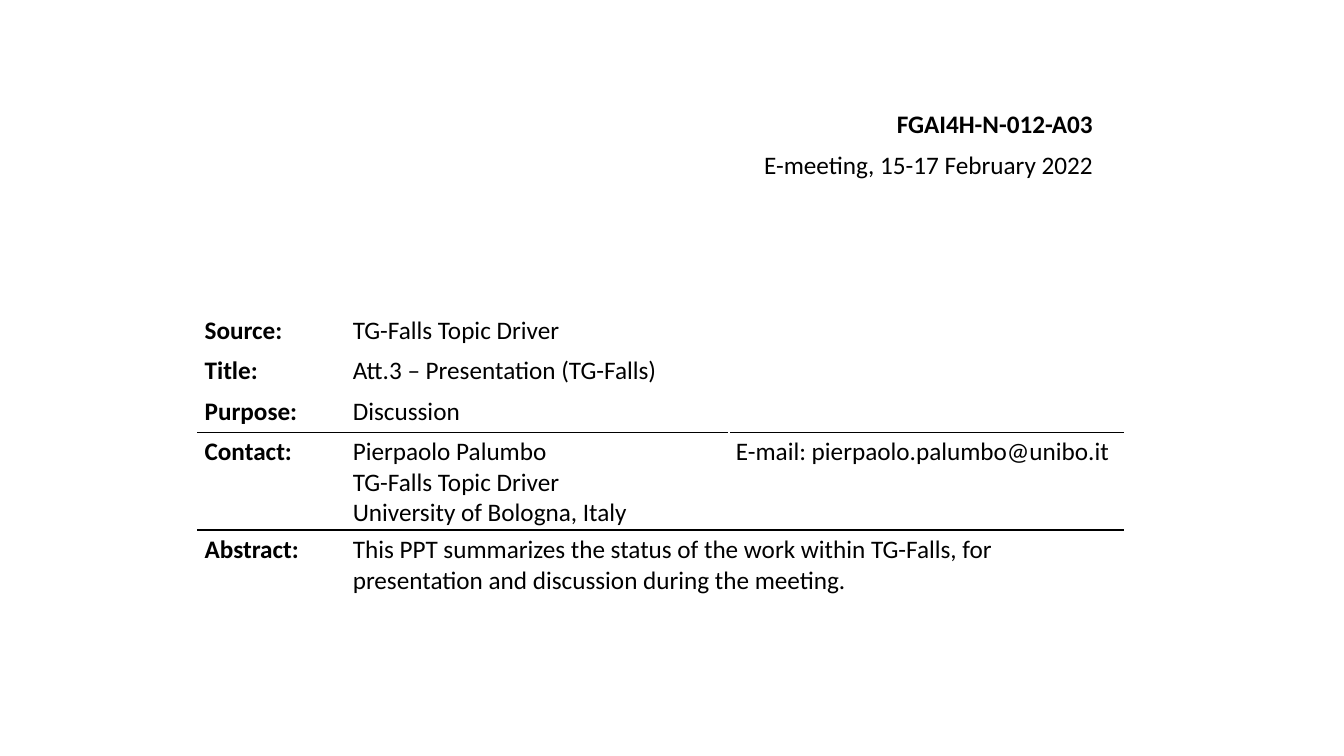
from dataclasses import dataclass

from lxml.etree import SubElement
from pptx import Presentation
from pptx.dml.color import RGBColor
from pptx.enum.text import MSO_ANCHOR, MSO_AUTO_SIZE, PP_ALIGN
from pptx.oxml.ns import qn
from pptx.util import Emu, Pt

PX = 9144  # 100 px to the inch
COLORS = {"ink": "000000", "paper": "FFFFFF"}
FONT = {"name": "Calibri", "size": Pt(18)}
COLUMN_WIDTHS = (147, 380, 391)
CELL_FORMAT = {
    "margin_left": 7 * PX,
    "margin_right": 7 * PX,
    "margin_top": 4 * PX,
    "margin_bottom": 3 * PX,
    "vertical_anchor": MSO_ANCHOR.TOP,
}


@dataclass
class Heading:
    text: str
    left: int
    top: int
    width: int
    bold: bool = False


@dataclass
class Row:
    label: str
    lines: tuple[str, ...]
    height: int = 40
    email: str = ""
    rules: tuple[str, ...] = ()


TITLE = Heading("FGAI4H-N-012-A03", 877, 102, 217, bold=True)
MEETING = Heading("E-meeting, 15-17 February 2022", 743, 143, 351)
ROWS = (
    Row("Source:", ("TG-Falls Topic Driver",)),
    Row("Title:", ("Att.3 – Presentation (TG-Falls)",)),
    Row("Purpose:", ("Discussion",), rules=("lnB",)),
    Row("Contact:",
        ("Pierpaolo Palumbo", "TG-Falls Topic Driver", "University of Bologna, Italy"),
        height=97, email="E-mail: pierpaolo.palumbo@unibo.it", rules=("lnT", "lnB")),
    Row("Abstract:",
        ("This PPT summarizes the status of the work within TG-Falls, "
         "for presentation and discussion during the meeting.",),
        height=68, rules=("lnT",)),
)


def px(length: int) -> Emu:
    return Emu(length * PX)


def apply(target, values: dict) -> None:
    for name, value in values.items():
        setattr(target, name, value)


def write(frame, lines: tuple[str, ...], bold: bool = False,
          alignment=PP_ALIGN.LEFT) -> None:
    frame.text = "\n".join(lines)
    for paragraph in frame.paragraphs:
        apply(paragraph, {"alignment": alignment, "line_spacing": 1.0, "space_before": Pt(0)})
        for run in paragraph.runs:
            apply(run.font, FONT | {"bold": bold})
            run.font.color.rgb = RGBColor.from_string(COLORS["ink"])


def place_heading(shape, heading: Heading) -> None:
    apply(shape, {"left": px(heading.left), "top": px(heading.top),
                  "width": px(heading.width), "height": px(40)})
    apply(shape.text_frame, {"word_wrap": False, "vertical_anchor": MSO_ANCHOR.TOP,
                             "auto_size": MSO_AUTO_SIZE.SHAPE_TO_FIT_TEXT})
    write(shape.text_frame, (heading.text,), heading.bold, PP_ALIGN.RIGHT)


def add_rules(cell, sides: tuple[str, ...]) -> None:
    properties = cell._tc.get_or_add_tcPr()
    for position, side in enumerate(sides):
        line = SubElement(properties, qn(f"a:{side}"), w=str(Pt(1.5)))
        fill = SubElement(line, qn("a:solidFill"))
        SubElement(fill, qn("a:srgbClr"), val=COLORS["ink"])
        properties.insert(position, line)  # borders come before the fill


def add_details(slide) -> None:
    height = sum(row.height for row in ROWS)
    table = slide.shapes.add_table(len(ROWS), len(COLUMN_WIDTHS), px(196), px(309),
                                   px(sum(COLUMN_WIDTHS)), px(height)).table
    apply(table, {"first_row": False, "horz_banding": False})
    for column, width in zip(table.columns, COLUMN_WIDTHS):
        column.width = px(width)
    for index, row in enumerate(ROWS):
        table.rows[index].height = px(row.height)
        label, content, email = table.rows[index].cells
        for cell in (label, content, email):
            apply(cell, CELL_FORMAT)
            cell.fill.background()
            add_rules(cell, row.rules)
        write(label.text_frame, (row.label,), bold=True)
        write(content.text_frame, row.lines)
        if row.email:
            write(email.text_frame, (row.email,))
        else:
            content.merge(email)


def main() -> None:
    presentation = Presentation()
    apply(presentation, {"slide_width": px(1333), "slide_height": px(750)})
    slide = presentation.slides.add_slide(presentation.slide_layouts[5])
    slide.background.fill.solid()
    slide.background.fill.fore_color.rgb = RGBColor.from_string(COLORS["paper"])

    # Document number and meeting
    place_heading(slide.shapes.title, TITLE)
    place_heading(slide.shapes.add_textbox(0, 0, 0, 0), MEETING)

    # Document details
    add_details(slide)
    presentation.save("out.pptx")


if __name__ == "__main__":
    main()
